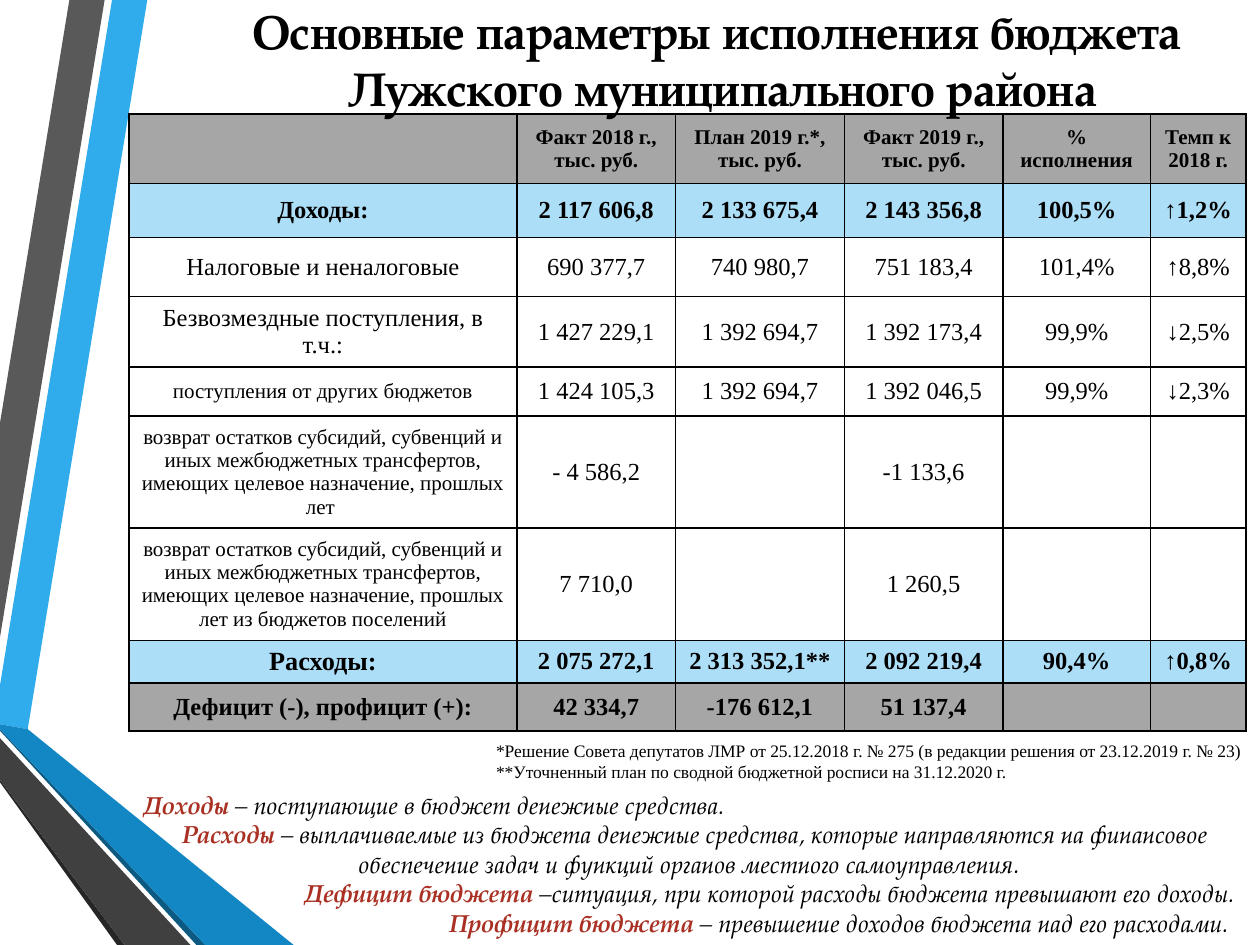
from lxml import etree
from pptx import Presentation
from pptx import util as u
from pptx.dml.color import RGBColor
from pptx.enum import text
from pptx.oxml.ns import qn

SERIF, DISPLAY = "Times New Roman", "TeX Gyre Pagella"
BLACK, WHITE, GREY, BLUE, RED = "000000", "FFFFFF", "A6A6A6", "ACDEF7", "A93023"
LEFT, CENTER, RIGHT = text.PP_ALIGN.LEFT, text.PP_ALIGN.CENTER, text.PP_ALIGN.RIGHT

# Ribbon outlines in cm: colour, points
RIBBONS = [
    ("30ACEC", [(0, 13.82), (0, 14.6), (0.56, 14.7), (2.97, 0), (2.26, 0)]),
    ("595959", [(2.11, 0), (1.4, 0), (0, 8.53), (0, 12.85)]),
    ("262626", [(0, 15.72), (0, 15.77), (2.36, 19.05), (2.51, 19.05)]),
    ("0C5A82", [(0, 14.7), (0, 14.73), (3.96, 19.05), (4.14, 19.05)]),
    ("1287C3", [(0, 14.7), (4.14, 19.05), (5.92, 19.05), (0.56, 14.7), (0, 14.6)]),
    ("404040", [(0, 15.72), (2.51, 19.05), (3.84, 19.05), (0, 14.88)]),
]

COLUMNS = [7.82, 3.2, 3.4, 3.2, 2.97, 1.93]
RETURNS = ("возврат остатков субсидий, субвенций и иных межбюджетных трансфертов, "
           "имеющих целевое назначение, прошлых лет ")
# Row height in cm, fill, bold, label size, value size, cell texts
ROWS = [
    (1.4, GREY, True, 12, 12, ["", "Факт 2018 г., тыс. руб.", "План 2019 г.*, тыс. руб.",
                               "Факт 2019 г., тыс. руб.", "% исполнения", "Темп к 2018 г."]),
    (1.09, BLUE, True, 14, 14, ["Доходы:", "2 117 606,8", "2 133 675,4",
                                "2 143 356,8", "100,5%", "↑1,2%"]),
    (1.19, WHITE, False, 14, 14, ["Налоговые и неналоговые", "690 377,7", "740 980,7",
                                  "751 183,4", "101,4%", "↑8,8%"]),
    (1.42, WHITE, False, 14, 14, ["Безвозмездные поступления, в т.ч.:", "1 427 229,1",
                                  "1 392 694,7", "1 392 173,4", "99,9%", "↓2,5%"]),
    (0.99, WHITE, False, 12, 14, ["поступления от других бюджетов", "1 424 105,3",
                                  "1 392 694,7", "1 392 046,5", "99,9%", "↓2,3%"]),
    (2.26, WHITE, False, 12, 14, [RETURNS, "- 4 586,2", "", "-1 133,6", "", ""]),
    (2.26, WHITE, False, 12, 14, [RETURNS + "из бюджетов поселений",
                                  "7 710,0", "", "1 260,5", "", ""]),
    (0.86, BLUE, True, 15, 14, ["Расходы:", "2 075 272,1", "2 313 352,1**",
                                "2 092 219,4", "90,4%", "↑0,8%"]),
    (0.97, GREY, True, 14, 14, ["Дефицит (-), профицит (+):", "42 334,7", "-176 612,1",
                                "51 137,4", "", ""]),
]

TITLE = ["Основные параметры исполнения бюджета", " Лужского муниципального района"]
DEFINITIONS = [
    (LEFT, "Доходы ", "– поступающие в бюджет денежные средства."),
    (CENTER, "Расходы ", "– выплачиваемые из бюджета денежные средства, которые "
     "направляются на финансовое обеспечение задач и функций органов местного самоуправления."),
    (RIGHT, "Дефицит бюджета", " –ситуация, при которой расходы бюджета превышают его доходы."),
    (RIGHT, "Профицит бюджета ", "– превышение доходов бюджета над его расходами. "),
]
FOOTNOTES = [
    "*Решение Совета депутатов ЛМР от 25.12.2018 г. № 275 (в редакции решения от 23.12.2019 г. № 23)",
    "**Уточненный план по сводной бюджетной росписи на 31.12.2020 г.",
]


def color(value):
    return RGBColor.from_string(value)


def add_run(paragraph, words, size, font, fill=BLACK, bold=False, italic=False):
    run = paragraph.add_run()
    run.text = words
    run.font.size = u.Pt(size)
    run.font.name = font
    run.font.bold = bold
    run.font.italic = italic
    run.font.color.rgb = color(fill)


def add_text(slide, box, paragraphs):
    """Each paragraph is an alignment and a list of add_run arguments."""
    frame = slide.shapes.add_textbox(*map(u.Cm, box)).text_frame
    frame.word_wrap = True
    frame.auto_size = text.MSO_AUTO_SIZE.SHAPE_TO_FIT_TEXT
    for index, (alignment, runs) in enumerate(paragraphs):
        paragraph = frame.add_paragraph() if index else frame.paragraphs[0]
        paragraph.alignment = alignment
        for run in runs:
            add_run(paragraph, *run)
    return frame


def add_ribbons(slide, left, top):
    for fill, points in RIBBONS:
        corners = [(u.Cm(left + x), u.Cm(top + y)) for x, y in points]
        builder = slide.shapes.build_freeform(*corners[0])
        builder.add_line_segments(corners[1:], close=True)
        shape = builder.convert_to_shape()
        shape.shadow.inherit = False
        shape.fill.solid()
        shape.fill.fore_color.rgb = color(fill)
        shape.line.fill.background()


def set_borders(cell):
    properties = cell._tc.get_or_add_tcPr()
    for index, side in enumerate(("a:lnL", "a:lnR", "a:lnT", "a:lnB")):
        line = etree.Element(qn(side), w=str(u.Pt(1)))
        fill = etree.SubElement(line, qn("a:solidFill"))
        etree.SubElement(fill, qn("a:srgbClr"), val=BLACK)
        properties.insert(index, line)


def fill_cell(cell, words, size, bold, fill):
    cell.fill.solid()
    cell.fill.fore_color.rgb = color(fill)
    set_borders(cell)
    cell.vertical_anchor = text.MSO_ANCHOR.MIDDLE
    cell.margin_left = cell.margin_right = u.Cm(0.24)
    if words:
        paragraph = cell.text_frame.paragraphs[0]
        paragraph.alignment = CENTER
        add_run(paragraph, words, size, SERIF, BLACK, bold)
    else:
        # An empty cell must not stretch its row
        cell.margin_top = cell.margin_bottom = 0


def add_budget_table(slide, left, top):
    width, height = sum(COLUMNS), sum(row[0] for row in ROWS)
    table = slide.shapes.add_table(len(ROWS), len(COLUMNS),
                                   *map(u.Cm, (left, top, width, height))).table
    for column, column_width in zip(table.columns, COLUMNS):
        column.width = u.Cm(column_width)
    for row, (row_height, fill, bold, label_size, value_size, words) in zip(table.rows, ROWS):
        row.height = u.Cm(row_height)
        for index, cell in enumerate(row.cells):
            fill_cell(cell, words[index], value_size if index else label_size, bold, fill)


def add_title(slide, box):
    add_text(slide, box, [(CENTER, [(line, 27, DISPLAY, BLACK, True)]) for line in TITLE])


def add_definitions(slide, box):
    frame = add_text(slide, box, [
        (alignment, [(term, 14, DISPLAY, RED, True, True),
                     (meaning, 14, DISPLAY, BLACK, False, True)])
        for alignment, term, meaning in DEFINITIONS])
    # First-line indent of the centred definition
    frame.paragraphs[1]._p.get_or_add_pPr().set("indent", str(u.Cm(0.24)))


def add_footnotes(slide, box):
    add_text(slide, box, [(LEFT, [(line, 10, SERIF)]) for line in FOOTNOTES])


def main():
    presentation = Presentation()
    presentation.slide_width, presentation.slide_height = u.Cm(25.4), u.Cm(19.05)
    slide = presentation.slides.add_slide(presentation.slide_layouts[6])
    add_ribbons(slide, 0, 0)
    add_budget_table(slide, 2.6, 2.3)
    add_title(slide, (3.3, -0.08, 22.3, 2.64))
    add_definitions(slide, (2.64, 15.8, 22.5, 3.25))
    add_footnotes(slide, (9.75, 14.8, 15.63, 0.99))
    presentation.save("out.pptx")


if __name__ == "__main__":
    main()
